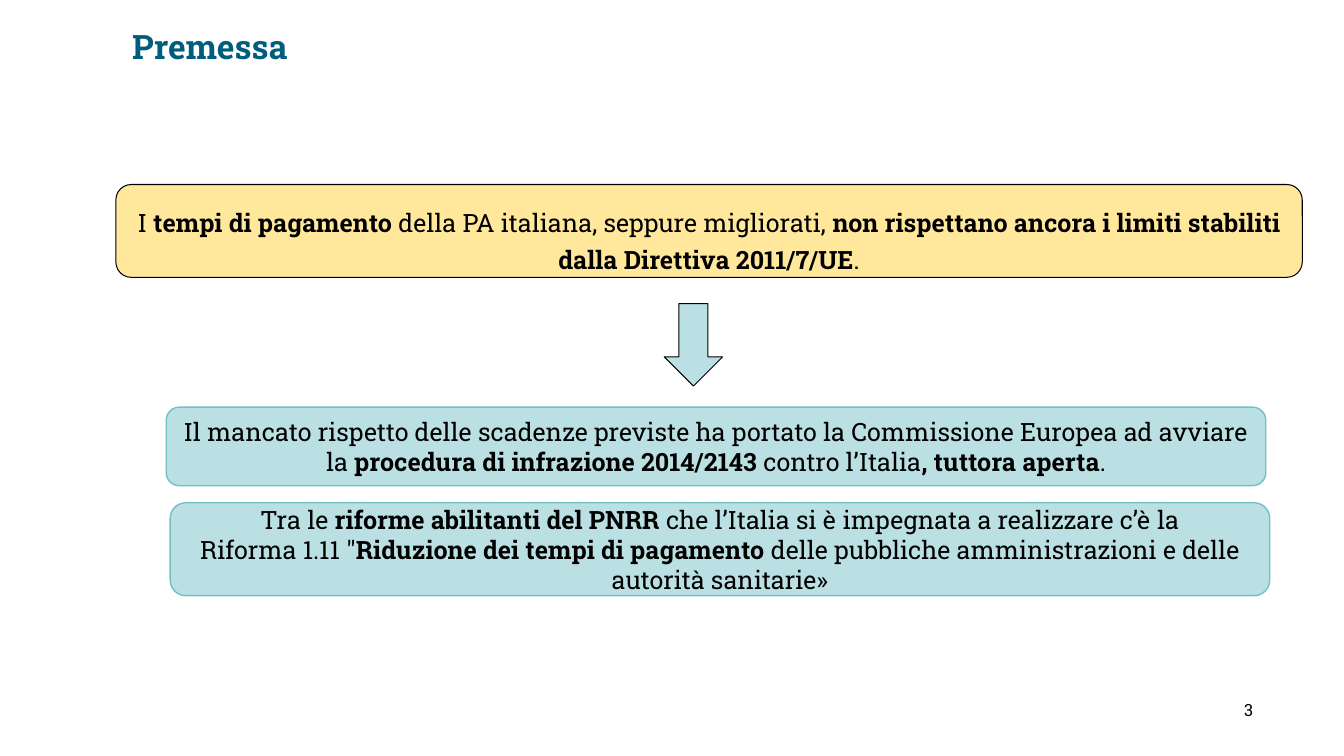
from dataclasses import dataclass

from pptx import Presentation
from pptx.dml.color import RGBColor
from pptx.enum import shapes, text
from pptx.util import Cm, Pt


@dataclass(frozen=True)
class Theme:
    font: str = "Roboto Slab"
    ink: str = "000000"
    heading: str = "005E7D"
    yellow: str = "FFE79B"
    aqua: str = "BBE0E3"
    aqua_edge: str = "72BFC5"
    title_size: int = 24
    body_size: int = 18
    number_size: int = 12


class SlideBuilder:
    def __init__(self, presentation, theme):
        self.theme = theme
        self.slide = presentation.slides.add_slide(presentation.slide_layouts[5])

    def add_wording(self, shape, parts, size, color, align, anchor):
        """Fill a shape with one paragraph; every second part is bold."""
        frame = shape.text_frame
        frame.word_wrap = True
        frame.auto_size = text.MSO_AUTO_SIZE.NONE
        frame.vertical_anchor = anchor
        paragraph = frame.paragraphs[0]
        paragraph.alignment = align
        for index, part in enumerate(parts):
            for line_index, line in enumerate(part.split("\n")):
                if line_index:
                    paragraph.add_line_break()
                run = paragraph.add_run()
                run.text = line
                run.font.name = self.theme.font
                run.font.size = Pt(size)
                run.font.bold = index % 2 == 1
                run.font.color.rgb = RGBColor.from_string(color)
        return paragraph

    def title(self, wording, left, top, width, height):
        shape = self.slide.shapes.title
        shape.left, shape.top = Cm(left), Cm(top)
        shape.width, shape.height = Cm(width), Cm(height)
        shape.text_frame.margin_left = Cm(1.27)
        paragraph = self.add_wording(shape, [wording], self.theme.title_size, self.theme.heading,
                                     text.PP_ALIGN.LEFT, text.MSO_ANCHOR.MIDDLE)
        paragraph.runs[0].font.bold = True

    def shape(self, kind, left, top, width, height, fill, edge, edge_width):
        shape = self.slide.shapes.add_shape(kind, Cm(left), Cm(top), Cm(width), Cm(height))
        shape.shadow.inherit = False
        shape.fill.solid()
        shape.fill.fore_color.rgb = RGBColor.from_string(fill)
        shape.line.color.rgb = RGBColor.from_string(edge)
        shape.line.width = Pt(edge_width)
        return shape

    def panel(self, parts, left, top, width, height):
        shape = self.shape(shapes.MSO_SHAPE.ROUNDED_RECTANGLE, left, top, width, height,
                           self.theme.aqua, self.theme.aqua_edge, 1)
        self.add_wording(shape, parts, self.theme.body_size, self.theme.ink,
                         text.PP_ALIGN.CENTER, text.MSO_ANCHOR.MIDDLE)

    def label(self, parts, left, top, width, height, size):
        box = self.slide.shapes.add_textbox(Cm(left), Cm(top), Cm(width), Cm(height))
        return self.add_wording(box, parts, size, self.theme.ink,
                                text.PP_ALIGN.CENTER, text.MSO_ANCHOR.TOP)


def main():
    presentation = Presentation()
    presentation.slide_width, presentation.slide_height = Cm(33.87), Cm(19.05)
    theme = Theme()
    builder = SlideBuilder(presentation, theme)

    builder.title("Premessa", 2.06, -0.33, 22.35, 3)

    builder.shape(shapes.MSO_SHAPE.ROUNDED_RECTANGLE, 2.92, 4.65, 29.9, 2.34,
                  theme.yellow, theme.ink, 0.75)
    statement = builder.label(
        ["I ", "tempi di pagamento", " della PA italiana, seppure migliorati, ",
         "non rispettano ancora i limiti stabiliti dalla Direttiva 2011/7/UE", "."],
        2.92, 4.9, 29.9, 1.9, theme.body_size)
    statement.line_spacing = 1.25
    statement.space_after = Pt(12)

    builder.shape(shapes.MSO_SHAPE.DOWN_ARROW, 16.74, 7.65, 1.47, 2.08,
                  theme.aqua, theme.ink, 0.75)

    builder.panel(
        ["Il mancato rispetto delle scadenze previste ha portato la Commissione Europea "
         "ad avviare la ", "procedura di infrazione 2014/2143", " contro l’Italia",
         ", tuttora aperta", "."],
        4.19, 10.26, 27.71, 1.98)
    builder.panel(
        ["Tra le ", "riforme abilitanti del PNRR",
         " che l’Italia si è impegnata a realizzare c’è la\nRiforma 1.11 \"",
         "Riduzione dei tempi di pagamento",
         " delle pubbliche amministrazioni e delle autorità sanitarie»"],
        4.29, 12.67, 27.71, 2.34)

    builder.label(["3"], 30.12, 17.5, 2.69, 1.27, theme.number_size)
    presentation.save("out.pptx")


if __name__ == "__main__":
    main()
